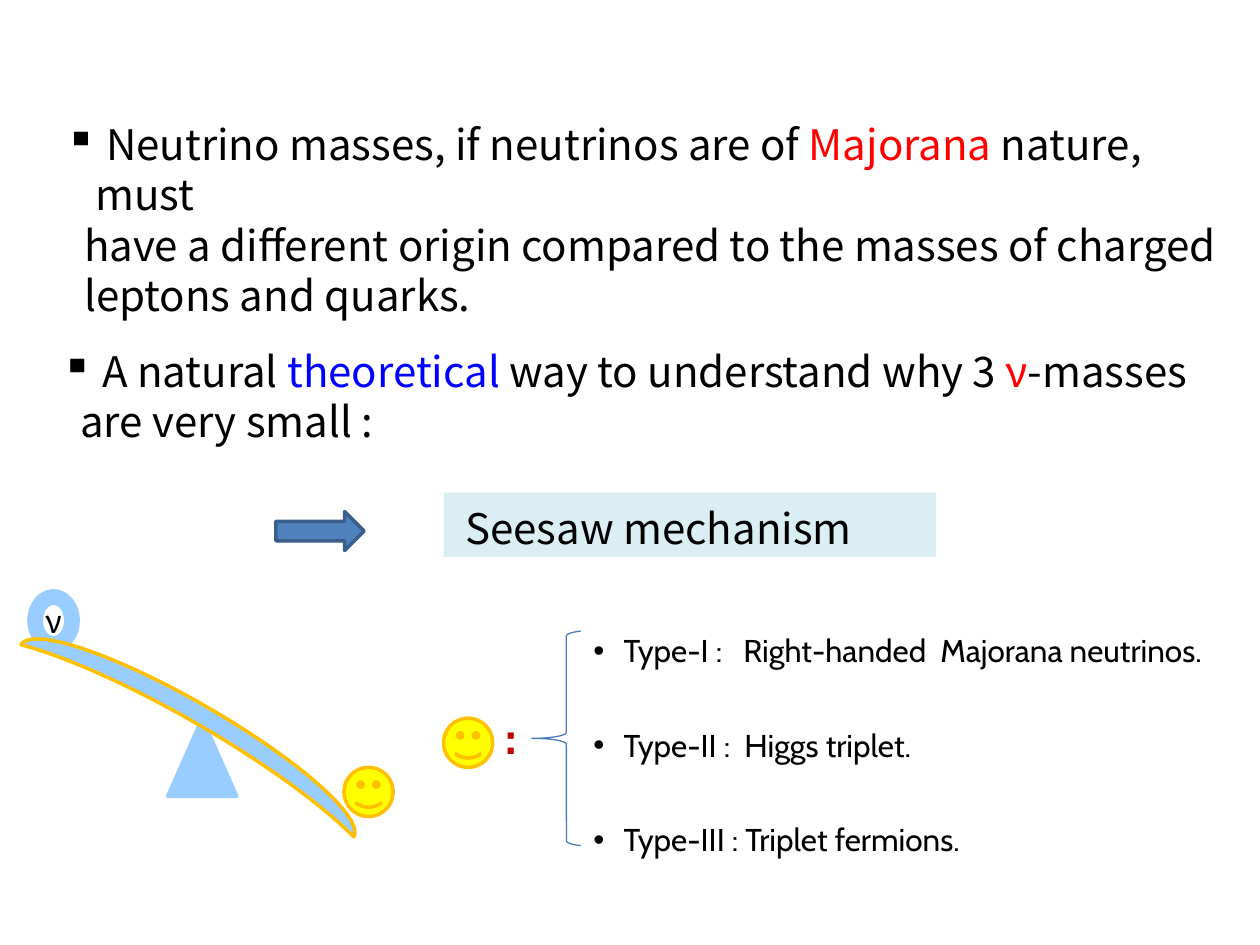
"""Build a slide on the seesaw mechanism for neutrino masses."""
from pptx import Presentation, util as u
from pptx.dml.color import RGBColor
from pptx.enum import shapes, text
from pptx.oxml import parse_xml
from pptx.oxml.ns import nsdecls

COLORS = {
    "black": "000000", "white": "FFFFFF", "red": "FF0000", "blue": "0000FF",
    "dark_red": "C00000", "arrow": "4F81BD", "arrow_edge": "3A5F8C",
    "brace": "4B7EBC", "banner": "DBEEF4", "sky": "99CCFF",
    "yellow": "FFFF00", "gold": "FFC000",
}
SANS, CABIN = "Noto Sans CJK KR", "Cabin"
KIND = shapes.MSO_SHAPE


def write(box, paragraphs, font=SANS, size=24, bold=False, bullet=None, bulleted=(),
          pitch=None, align=text.PP_ALIGN.LEFT, anchor=text.MSO_ANCHOR.TOP,
          wrap=True, top=0.05, right=0.1):
    """Fill a box with paragraphs, each a list of (words, color) spans."""
    frame = box.text_frame
    frame.word_wrap = wrap
    frame.auto_size = text.MSO_AUTO_SIZE.NONE
    frame.vertical_anchor = anchor
    frame.margin_top, frame.margin_right = u.Inches(top), u.Inches(right)
    for index, spans in enumerate(paragraphs):
        para = frame.paragraphs[0] if index == 0 else frame.add_paragraph()
        para.alignment = align
        para.space_before = u.Pt(0)
        if pitch:
            para.line_spacing = pitch
        if index in bulleted:
            props = para._p.get_or_add_pPr()
            props.set("marL", str(u.Inches(0.24)))
            props.set("indent", str(-u.Inches(0.24)))
            props.append(parse_xml(f'<a:buChar {nsdecls("a")} char="{bullet}"/>'))
        for words, color in spans:
            span = para.add_run()
            span.text = words
            span.font.name, span.font.size, span.font.bold = font, u.Pt(size), bold
            span.font.color.rgb = RGBColor.from_string(COLORS[color])


def draw(kind, place, fill=None, edge=None, width=2, turn=0):
    """Add a preset shape with flat fill and edge."""
    shape = slide.shapes.add_shape(kind, *map(u.Inches, place))
    shape.shadow.inherit = False
    shape.rotation = turn
    if fill:
        shape.fill.solid()
        shape.fill.fore_color.rgb = RGBColor.from_string(COLORS[fill])
    else:
        shape.fill.background()
    if edge:
        shape.line.color.rgb = RGBColor.from_string(COLORS[edge])
        shape.line.width = u.Pt(width)
    else:
        shape.line.fill.background()
    return shape


deck = Presentation()
deck.slide_width, deck.slide_height = u.Inches(10), u.Inches(7.5)
slide = deck.slides.add_slide(deck.slide_layouts[1])
title = slide.shapes.title
title._element.getparent().remove(title._element)
types = slide.placeholders[1]

statements = [
    ((0.42, 0.86, 9.58, 1.31), [
        [(" Neutrino masses, if neutrinos are of ", "black"), ("Majorana", "red"),
         (" nature, must", "black")],
        [("  have a different origin compared to the masses of charged", "black")],
        [("  leptons and quarks.", "black")],
    ]),
    ((0.39, 2.66, 9.21, 0.91), [
        [(" A natural ", "black"), ("theoretical", "blue"),
         (" way to understand why 3 ", "black"), ("ν", "red"), ("-masses", "black")],
        [("  are very small :", "black")],
    ]),
]
line_pitch = u.Pt(28.8)
for place, paragraphs in statements:
    box = slide.shapes.add_textbox(*map(u.Inches, place))
    write(box, paragraphs, bullet="▪", bulleted=(0,), pitch=line_pitch, top=0.08,
          right=0.2 if place[2] > 9.5 else 0.1)

draw(KIND.RIGHT_ARROW, (2.19, 4.06, 0.7, 0.31), "arrow", "arrow_edge")
banner = draw(KIND.RECTANGLE, (3.52, 3.91, 3.91, 0.51), "banner")
write(banner, [[(" Seesaw mechanism", "black")]], pitch=line_pitch, top=0.08)

draw(KIND.LEFT_BRACE, (4.22, 5, 0.55, 1.72), edge="brace", width=0.75)
slide.shapes._spTree.append(types._element)
types.left, types.top = u.Inches(4.61), u.Inches(4.51)
types.width, types.height = u.Inches(5.39), u.Inches(2.37)
types.fill.solid()
types.fill.fore_color.rgb = RGBColor.from_string(COLORS["white"])
kinds = ["Type-I :   Right-handed  Majorana neutrinos.", "Type-II :  Higgs triplet.",
         "Type-III : Triplet fermions."]
write(types, [[(kind, "black")] for kind in kinds], font=CABIN, size=18,
      bullet="•", bulleted=range(len(kinds)), pitch=2.5)

draw(KIND.ISOSCELES_TRIANGLE, (1.33, 5.7, 0.55, 0.62), "sky", "sky")
neutrino = draw(KIND.DONUT, (0.23, 4.69, 0.39, 0.47), "sky", "sky")
write(neutrino, [[("ν", "black")]], size=18, align=text.PP_ALIGN.CENTER,
      anchor=text.MSO_ANCHOR.MIDDLE, wrap=False)

for left, top in [(2.73, 6.09), (3.52, 5.7)]:
    draw(KIND.SMILEY_FACE, (left, top, 0.39, 0.39), "yellow", "gold")
colon = slide.shapes.add_textbox(*map(u.Inches, (3.91, 5.55, 0.31, 0.57)))
write(colon, [[(":", "dark_red")]], font=CABIN, size=28, bold=True)
draw(KIND.MOON, (1.41, 4.22, 0.31, 3.05), "sky", "gold", turn=120)

deck.save("out.pptx")
